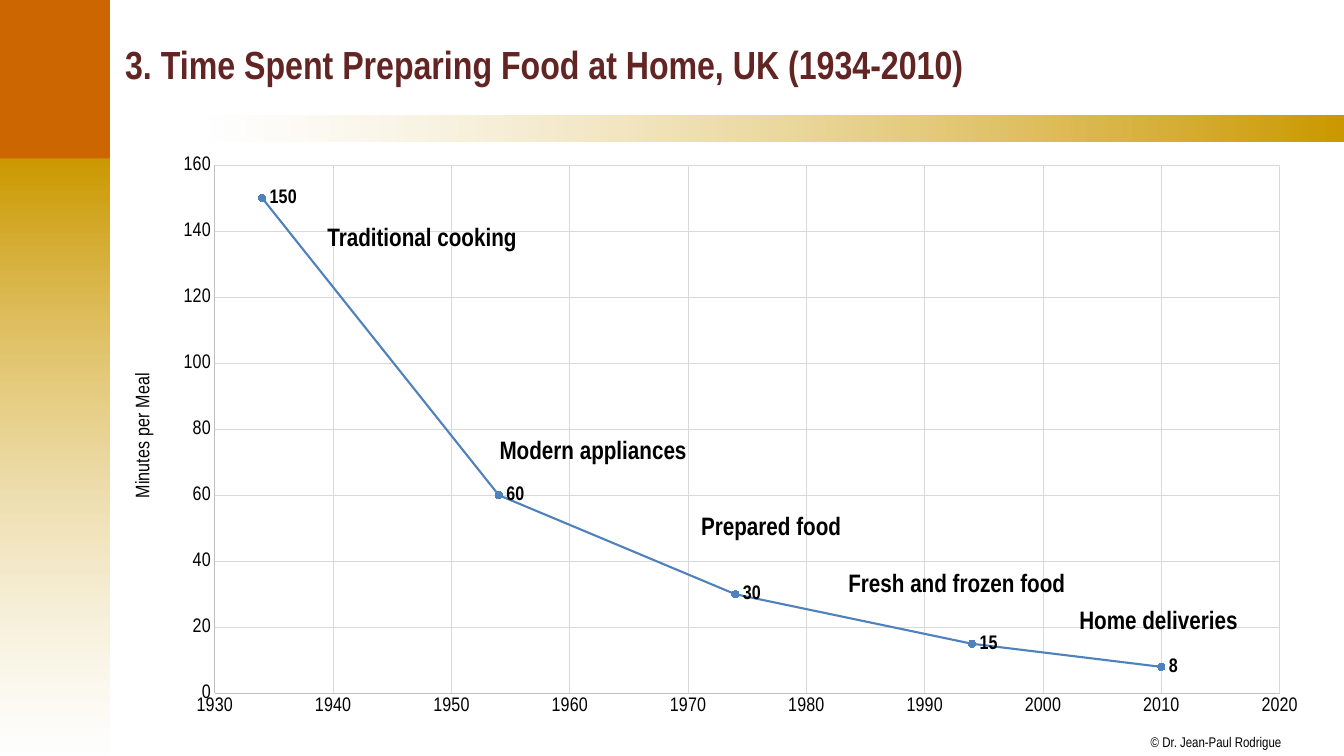
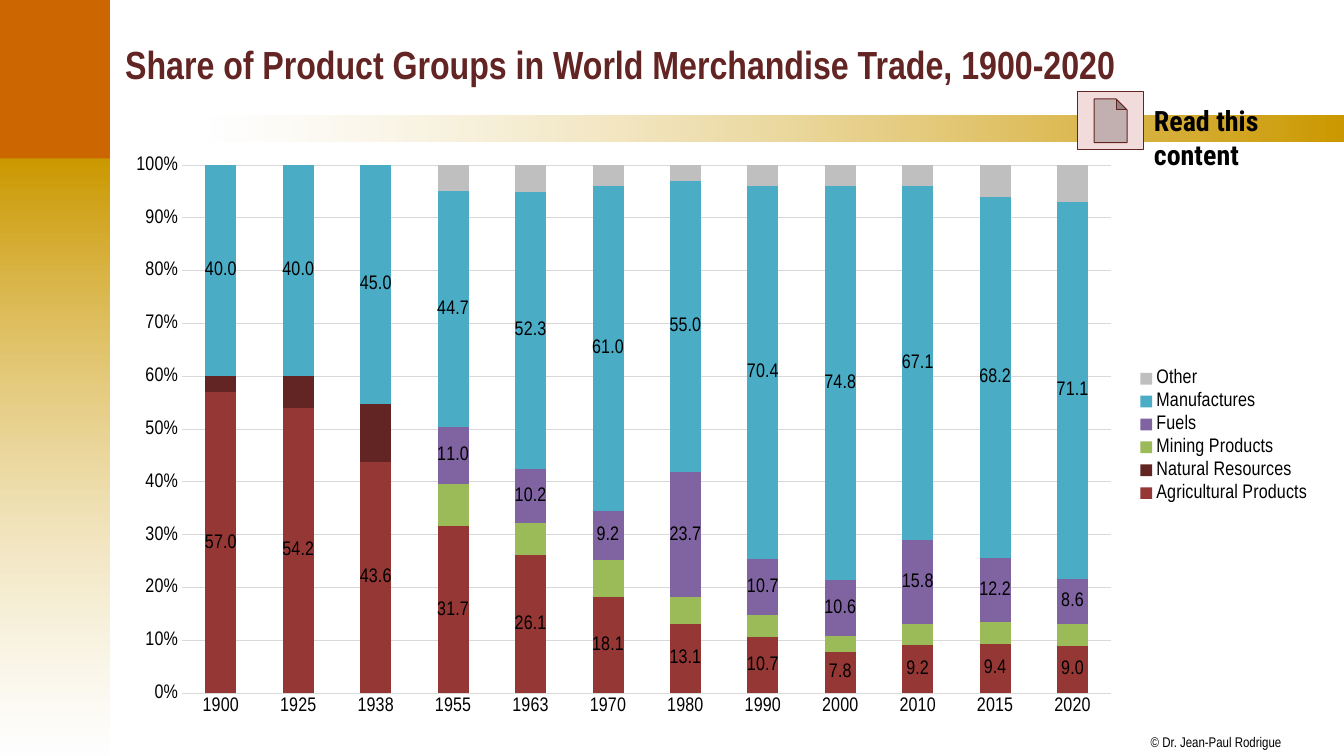
from lxml import etree
from pptx import Presentation
from pptx import util as u
from pptx.chart import data as chart_data
from pptx.dml.color import RGBColor
from pptx.enum import chart as ch
from pptx.enum import shapes, text
from pptx.oxml.ns import qn

COLORS = {
    "ink": "000000",
    "title": "632523",
    "orange": "CC6600",
    "gold": "CC9900",
    "white": "FFFFFF",
    "grid": "D9D9D9",
    "axis": "BFBFBF",
    "curve": "4F81BD",
    "button": "F2DCDB",
    "agriculture": "953735",
    "resources": "632523",
    "mining": "9BBB59",
    "fuels": "8064A2",
    "manufactures": "4BACC6",
    "other": "BFBFBF",
}
RGB = {name: RGBColor.from_string(value) for name, value in COLORS.items()}
FONT = "Arial Narrow"


def add_label(slide, words, left, top, width, height, size, bold=True, font=FONT, wrap=False):
    label = slide.shapes.add_textbox(u.Cm(left), u.Cm(top), u.Cm(width), u.Cm(height))
    frame = label.text_frame
    frame.word_wrap = wrap
    frame.auto_size = text.MSO_AUTO_SIZE.SHAPE_TO_FIT_TEXT
    line = frame.paragraphs[0]
    line.text = words
    line.font.name = font
    line.font.size = u.Pt(size)
    line.font.bold = bold
    line.font.color.rgb = RGB["ink"]
    return label


def add_styled_chart(slide, kind, figures, plot_box):
    chart = slide.shapes.add_chart(
        kind, u.Cm(2.79), u.Cm(3.63), u.Cm(30.53), u.Cm(14.71), figures
    ).chart
    chart.has_title = False
    chart.has_legend = False
    chart.font.name = FONT
    chart.font.size = u.Pt(14)
    chart.font.color.rgb = RGB["ink"]
    chart.plots[0].vary_by_categories = False
    for axis in (chart.category_axis, chart.value_axis):
        axis.major_tick_mark = ch.XL_TICK_MARK.NONE
        axis.minor_tick_mark = ch.XL_TICK_MARK.NONE
    area = chart.element.find(".//" + qn("c:plotArea"))
    for old in area.findall(qn("c:layout")):
        area.remove(old)
    layout = etree.Element(qn("c:layout"))
    manual = etree.SubElement(layout, qn("c:manualLayout"))
    settings = [("layoutTarget", "inner"), ("xMode", "edge"), ("yMode", "edge")]
    for tag, value in settings + list(zip("xywh", plot_box)):
        etree.SubElement(manual, qn("c:" + tag)).set("val", str(value))
    area.insert(0, layout)
    return chart


deck = Presentation()
deck.slide_width, deck.slide_height = u.Cm(33.87), u.Cm(19.05)
master = deck.slide_master
title_only = deck.slide_layouts[5]

title_style = master.element.find(".//" + qn("p:titleStyle") + "/" + qn("a:lvl1pPr"))
title_style.set("algn", "l")
title_font = title_style.find(qn("a:defRPr"))
for child in list(title_font):
    title_font.remove(child)
title_font.set("sz", "2800")
title_font.set("b", "1")
title_fill = etree.SubElement(title_font, qn("a:solidFill"))
etree.SubElement(title_fill, qn("a:srgbClr")).set("val", COLORS["title"])
etree.SubElement(title_font, qn("a:latin")).set("typeface", FONT)
for holder in (master, title_only):
    heading = next(
        p for p in holder.placeholders
        if p.placeholder_format.type == shapes.PP_PLACEHOLDER.TITLE
    )
    heading.left, heading.top = u.Cm(2.9), u.Cm(0.28)
    heading.width, heading.height = u.Cm(30.4), u.Cm(2.64)

cooking = deck.slides.add_slide(title_only)
trade = deck.slides.add_slide(title_only)

decor = []
for box, stops, angle in [
    ((-0.05, 3.99, 2.82, 15.06), [("gold", 100), ("white", 51)], 270),
    ((5.31, 2.92, 28.56, 0.66), [("white", 50), ("gold", 100)], 0),
    ((-0.05, -0.03, 2.82, 4.02), [("orange", 100)], 0),
]:
    band = cooking.shapes.add_shape(shapes.MSO_SHAPE.RECTANGLE, *map(u.Cm, box))
    band.shadow.inherit = False
    band.line.fill.background()
    if len(stops) == 1:
        band.fill.solid()
        band.fill.fore_color.rgb = RGB[stops[0][0]]
    else:
        band.fill.gradient()
        band.fill.gradient_angle = angle
        for stop, (name, _) in zip(band.fill.gradient_stops, stops):
            stop.color.rgb = RGB[name]
        for tint, (_, opacity) in zip(band.element.iter(qn("a:srgbClr")), stops):
            if opacity < 100:
                etree.SubElement(tint, qn("a:alpha")).set("val", str(opacity * 1000))
    decor.append(band)

credit = add_label(cooking, "© Dr. Jean-Paul Rodrigue", 29, 18.49, 3.33, 0.43, 10, bold=False)
margins = credit.text_frame
margins.margin_left = margins.margin_right = margins.margin_top = margins.margin_bottom = 0
decor.append(credit)
for number, part in enumerate(decor, 20):
    part.element.find(".//" + qn("p:cNvPr")).set("id", str(number))
    master.shapes.element.append(part.element)

cooking.shapes.title.text = "3. Time Spent Preparing Food at Home, UK (1934-2010)"
minutes = chart_data.XyChartData()
meal_times = minutes.add_series("Series 1")
for year, spent in [(1934, 150), (1954, 60), (1974, 30), (1994, 15), (2010, 8)]:
    meal_times.add_data_point(year, spent)
time_chart = add_styled_chart(
    cooking, ch.XL_CHART_TYPE.XY_SCATTER_LINES, minutes, (0.086, 0.036, 0.879, 0.905)
)
years, spent_axis = time_chart.category_axis, time_chart.value_axis
for axis, low, high, step in [(years, 1930, 2020, 10), (spent_axis, 0, 160, 20)]:
    axis.minimum_scale, axis.maximum_scale, axis.major_unit = low, high, step
    axis.has_major_gridlines = True
    for line, name in [(axis.format.line, "axis"), (axis.major_gridlines.format.line, "grid")]:
        line.color.rgb = RGB[name]
        line.width = u.Pt(0.75)
caption = spent_axis.axis_title.text_frame.paragraphs[0]
caption.text = "Minutes per Meal"
caption.font.name = FONT
caption.font.size = u.Pt(14)
caption.font.bold = False
caption.font.color.rgb = RGB["ink"]

curve = time_chart.plots[0].series[0]
curve.format.line.color.rgb = RGB["curve"]
curve.format.line.width = u.Pt(1.5)
curve.marker.style = ch.XL_MARKER_STYLE.CIRCLE
curve.marker.size = 5
curve.marker.format.fill.solid()
curve.marker.format.fill.fore_color.rgb = RGB["curve"]
curve.marker.format.line.color.rgb = RGB["curve"]
for index in range(len(meal_times)):
    value_label = curve.points[index].data_label
    value_label.font.name = FONT
    value_label.font.size = u.Pt(14)
    value_label.font.bold = True
    value_label.font.color.rgb = RGB["ink"]
    value_label.position = ch.XL_LABEL_POSITION.RIGHT

for era, left, top, width in [
    ("Traditional cooking", 8, 5.44, 5.33),
    ("Modern appliances", 12.34, 10.82, 5.28),
    ("Prepared food", 17.42, 12.73, 4.09),
    ("Fresh and frozen food", 21.13, 14.17, 6.05),
    ("Home deliveries", 26.95, 15.11, 4.55),
]:
    add_label(cooking, era, left, top, width, 1.02, 18)

trade.shapes.title.text = "Share of Product Groups in World Merchandise Trade, 1900-2020"
button = trade.shapes.add_shape(
    shapes.MSO_SHAPE.ACTION_BUTTON_DOCUMENT, u.Cm(27.15), u.Cm(2.31), u.Cm(1.68), u.Cm(1.47)
)
button.shadow.inherit = False
button.fill.solid()
button.fill.fore_color.rgb = RGB["button"]
button.line.color.rgb = RGB["title"]
button.line.width = u.Pt(0.75)
add_label(trade, "Read this content", 28.83, 2.49, 4.72, 1.12, 20, font="Roboto Condensed", wrap=True)

gap = [None]
groups = [
    ("Agricultural Products", "agriculture", True,
     [57, 54.2, 43.6, 31.7, 26.1, 18.1, 13.1, 10.7, 7.8, 9.2, 9.4, 9]),
    ("Natural Resources", "resources", False, [3, 6, 11] + gap * 9),
    ("Mining Products", "mining", False, gap * 3 + [8, 6, 7, 5, 4, 3, 4, 4, 4]),
    ("Fuels", "fuels", True, gap * 3 + [11, 10.2, 9.2, 23.7, 10.7, 10.6, 15.8, 12.2, 8.6]),
    ("Manufactures", "manufactures", True,
     [40, 40, 45, 44.7, 52.3, 61, 55, 70.4, 74.8, 67.1, 68.2, 71.1]),
    ("Other", "other", False, gap * 3 + [5, 5, 4, 3, 4, 4, 4, 6, 7]),
]
shares = chart_data.CategoryChartData()
shares.categories = "1900 1925 1938 1955 1963 1970 1980 1990 2000 2010 2015 2020".split()
for name, _, _, values in groups:
    shares.add_series(name, values)
share_chart = add_styled_chart(
    trade, ch.XL_CHART_TYPE.COLUMN_STACKED_100, shares, (0.059, 0.036, 0.767, 0.905)
)
columns = share_chart.plots[0]
columns.gap_width, columns.overlap = 150, 100
for group, (_, color, labelled, _) in zip(columns.series, groups):
    group.format.fill.solid()
    group.format.fill.fore_color.rgb = RGB[color]
    if labelled:
        labels = group.data_labels
        labels.show_value = True
        labels.number_format = "#,##0.0"
        labels.number_format_is_linked = False
        labels.font.name = FONT
        labels.font.size = u.Pt(14)
        labels.font.color.rgb = RGB["ink"]

percent = share_chart.value_axis
percent.minimum_scale, percent.maximum_scale, percent.major_unit = 0, 1, 0.1
percent.tick_labels.number_format = "0%"
percent.tick_labels.number_format_is_linked = False
percent.format.line.fill.background()
percent.has_major_gridlines = True
for line in (percent.major_gridlines.format.line, share_chart.category_axis.format.line):
    line.color.rgb = RGB["grid"]
    line.width = u.Pt(0.75)
share_chart.has_legend = True
share_chart.legend.position = ch.XL_LEGEND_POSITION.RIGHT
share_chart.legend.include_in_layout = False

deck.save("out.pptx")
